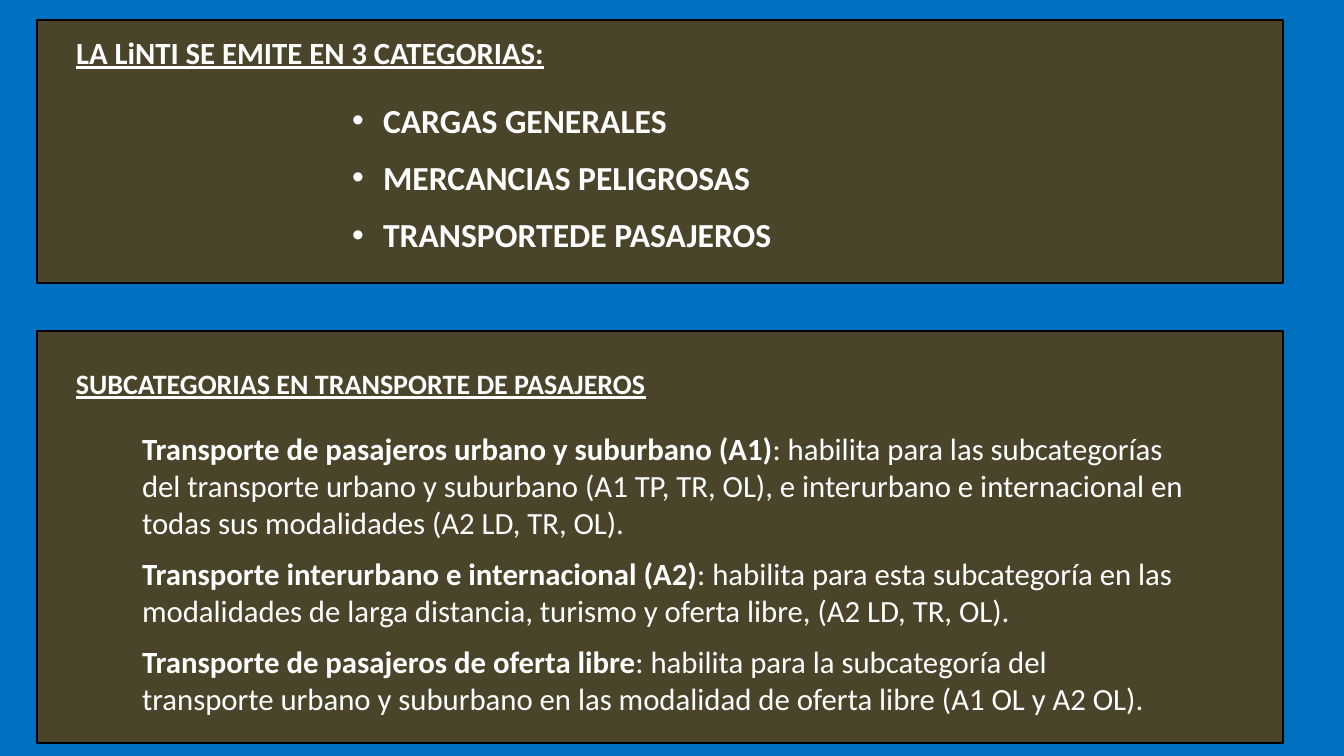
"""Build a slide on the LiNTI categories and the passenger transport subcategories."""
from pptx import Presentation
from pptx.dml.color import RGBColor
from pptx.enum import shapes, text
from pptx.util import Pt

EMU_PER_PX = 12192000 / 1344
BLUE = RGBColor(0x00, 0x70, 0xC0)
OLIVE = RGBColor(0x4A, 0x45, 0x2A)
BLACK = RGBColor(0x00, 0x00, 0x00)
WHITE = RGBColor(0xFF, 0xFF, 0xFF)

CATEGORIES = ["CARGAS GENERALES", "MERCANCIAS PELIGROSAS", "TRANSPORTEDE PASAJEROS"]
SUBCATEGORIES = [
    ("Transporte de pasajeros urbano y suburbano (A1)",
     ": habilita para las subcategorías del transporte urbano y suburbano (A1 TP, TR, OL), "
     "e interurbano e internacional en todas sus modalidades (A2 LD, TR, OL)."),
    ("Transporte interurbano e internacional (A2)",
     ": habilita para esta subcategoría en las modalidades de larga distancia, "
     "turismo y oferta libre, (A2 LD, TR, OL)."),
    ("Transporte de pasajeros de oferta libre",
     ": habilita para la subcategoría del transporte urbano y suburbano "
     "en las modalidad de oferta libre (A1 OL y A2 OL)."),
]


def px(n):
    """Turn pixels into EMU."""
    return round(n * EMU_PER_PX)


def place(sp, x, y, w, h):
    """Move and size a shape."""
    sp.left, sp.top, sp.width, sp.height = px(x), px(y), px(w), px(h)


def add_panel(s, *box):
    """Add a bordered panel behind the text."""
    sp = s.shapes.add_shape(shapes.MSO_SHAPE.RECTANGLE, *map(px, box))
    sp.shadow.inherit = False
    sp.fill.solid()
    sp.fill.fore_color.rgb = OLIVE
    sp.line.color.rgb = BLACK
    sp.line.width = Pt(2)
    s.shapes.title.element.addprevious(sp.element)


def style_run(r, size, bold=True, underline=False):
    """Set the font of a run."""
    r.font.name = "Calibri"
    r.font.size = Pt(size)
    r.font.bold = bold
    r.font.underline = underline
    r.font.color.rgb = WHITE


def set_frame(tf, wrap):
    """Anchor a text frame at the top and let it fit its text."""
    tf.word_wrap = wrap
    tf.auto_size = text.MSO_AUTO_SIZE.SHAPE_TO_FIT_TEXT
    tf.vertical_anchor = text.MSO_ANCHOR.TOP


def set_heading(sp, words, size):
    """Write an underlined heading."""
    tf = sp.text_frame
    set_frame(tf, False)
    tf.text = words
    p = tf.paragraphs[0]
    p.alignment = text.PP_ALIGN.LEFT
    style_run(p.runs[0], size, underline=True)


def fill_list(sp, items, size, gap, hang, bulleted):
    """Write paragraphs of a bold part and an optional plain part."""
    tf = sp.text_frame
    set_frame(tf, True)
    for i, parts in enumerate(items):
        p = tf.add_paragraph() if i else tf.paragraphs[0]
        pPr = p._p.get_or_add_pPr()
        pPr.set("marL", str(px(hang)))
        pPr.set("indent", str(-px(hang)))
        if not bulleted:
            pPr.insert_element_before(pPr.makeelement(
                "{http://schemas.openxmlformats.org/drawingml/2006/main}buNone"), "a:tabLst")
        p.alignment = text.PP_ALIGN.LEFT
        p.line_spacing = 1.0
        p.space_before = Pt(gap if i else 0)
        for j, part in enumerate(parts):
            r = p.add_run()
            r.text = part
            style_run(r, size, bold=j == 0)


def main():
    """Build and save the slide."""
    prs = Presentation()
    prs.slide_width, prs.slide_height = px(1344), px(756)
    s = prs.slides.add_slide(prs.slide_layouts[3])
    s.background.fill.solid()
    s.background.fill.fore_color.rgb = BLUE

    add_panel(s, 37, 331, 1246, 412)
    add_panel(s, 37, 20, 1246, 263)

    title, categories, details = s.placeholders
    place(title, 66, 29, 494, 47)
    set_heading(title, "LA LiNTI SE EMITE EN 3 CATEGORIAS:", 22)

    place(categories, 342, 95, 608, 166)
    fill_list(categories, [(c,) for c in CATEGORIES], 24, 12, 31, True)

    place(details, 132, 425, 1063, 298)
    fill_list(details, SUBCATEGORIES, 22, 10, 0, False)

    subtitle = s.shapes.add_textbox(*map(px, (66, 362, 595, 44)))
    set_heading(subtitle, "SUBCATEGORIAS EN TRANSPORTE DE PASAJEROS", 20)

    prs.save("out.pptx")


if __name__ == "__main__":
    main()
